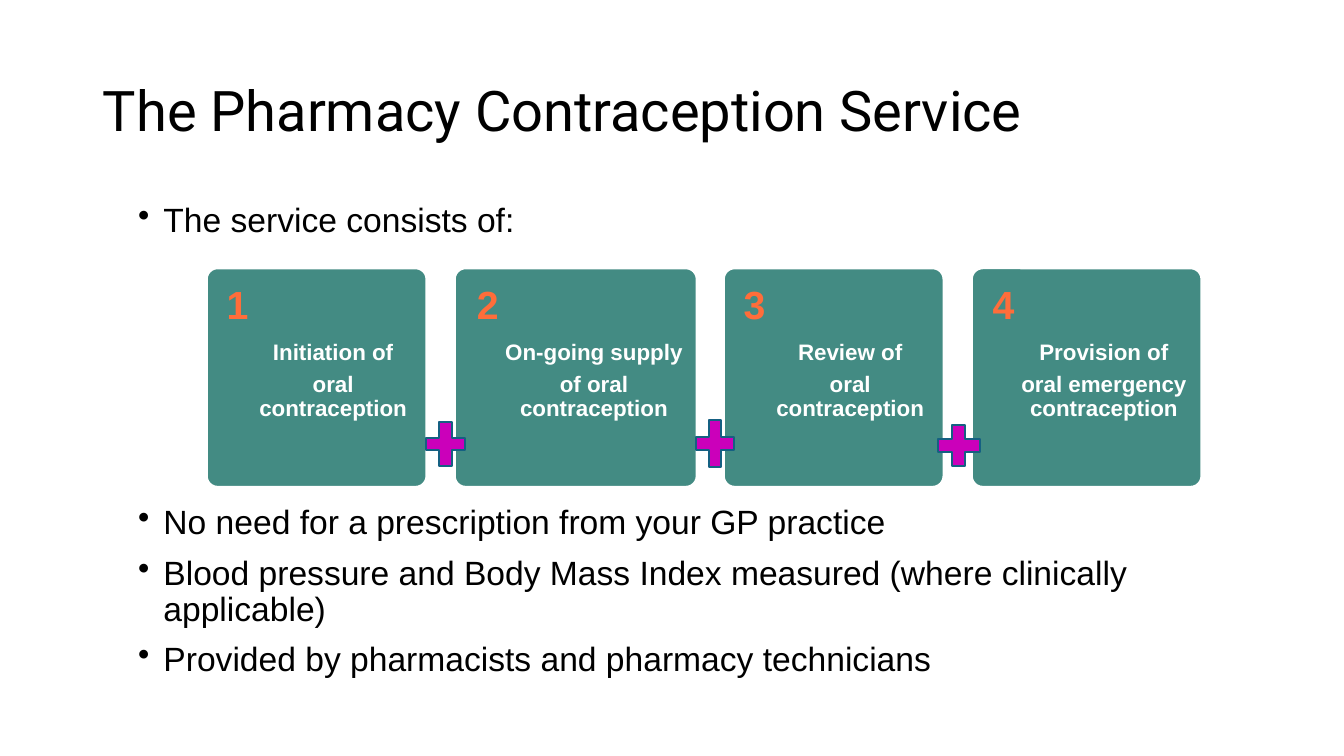
from lxml import etree
from pptx import Presentation
from pptx.dml.color import RGBColor
from pptx.enum.shapes import MSO_SHAPE
from pptx.enum.text import MSO_ANCHOR, MSO_AUTO_SIZE, PP_ALIGN
from pptx.oxml.ns import qn
from pptx.util import Cm, Pt

LEFT, CENTER = PP_ALIGN.LEFT, PP_ALIGN.CENTER
MIDDLE = MSO_ANCHOR.MIDDLE
NO_AUTOFIT = MSO_AUTO_SIZE.NONE
ROUNDED, PLUS = MSO_SHAPE.ROUNDED_RECTANGLE, MSO_SHAPE.MATH_PLUS

BULLET_GROUPS = [
    (5, ["The service consists of:"]),
    (12.62, [
        "No need for a prescription from your GP practice",
        "Blood pressure and Body Mass Index measured (where clinically applicable)",
        "Provided by pharmacists and pharmacy technicians",
    ]),
]
CARD_TOP, CARD_HEIGHT = 6.76, 5.51
CARDS = [
    (5.21, 5.54, ["Initiation of", "oral contraception"]),
    (11.46, 6.1, ["On-going supply", "of oral contraception"]),
    (18.24, 5.54, ["Review of", "oral contraception"]),
    (24.49, 5.79, ["Provision of", "oral emergency contraception"]),
]
PLUSES = [
    (10.55, 10.43, 1.35, 1.52),
    (17.36, 10.38, 1.32, 1.6),
    (23.44, 10.52, 1.45, 1.42),
]


def color(value):
    return RGBColor.from_string(value)


def write(frame, lines, size, ink, font="Arial", bold=False, align=LEFT):
    frame.word_wrap = True
    frame.auto_size = NO_AUTOFIT
    frame.text = "\n".join(lines)
    for para in frame.paragraphs:
        para.alignment = align
        para.line_spacing = 0.9
        for span in para.runs:
            span.font.name = font
            span.font.size = Pt(size)
            span.font.bold = bold
            span.font.color.rgb = color(ink)


deck = Presentation()
deck.slide_width, deck.slide_height = Cm(33.87), Cm(19.05)
page = deck.slides.add_slide(deck.slide_layouts[5])
shapes = page.shapes

title = shapes.title
title.left, title.top, title.width, title.height = Cm(2.34), Cm(1.02), Cm(29.21), Cm(3.68)
title.text_frame.vertical_anchor = MIDDLE
write(title.text_frame, ["The Pharmacy Contraception Service"], 40, "000000", font="Roboto")

for top, lines in BULLET_GROUPS:
    box = shapes.add_textbox(Cm(3.23), Cm(top), Cm(27.41), Cm(1.5 * len(lines)))
    write(box.text_frame, lines, 24, "000000")
    for index, para in enumerate(box.text_frame.paragraphs):
        para.space_before = Pt(10 if index else 0)
        properties = para._p.get_or_add_pPr()
        properties.set("marL", str(Cm(0.64)))
        properties.set("indent", str(-Cm(0.64)))
        etree.SubElement(properties, qn("a:buChar")).set("char", "•")

for number, (left, width, lines) in enumerate(CARDS, 1):
    card = shapes.add_shape(ROUNDED, Cm(left), Cm(CARD_TOP), Cm(width), Cm(CARD_HEIGHT))
    card.adjustments[0] = 0.05
    card.shadow.inherit = False
    card.fill.solid()
    card.fill.fore_color.rgb = color("438B83")
    card.line.color.rgb = color("FFFFFF")
    card.line.width = Pt(1.5)

    label = shapes.add_textbox(Cm(left + 0.1 * width - 0.05), Cm(7.21), Cm(1.2), Cm(1.1))
    write(label.text_frame, [str(number)], 28, "FF6D3A", bold=True)

    caption = shapes.add_textbox(Cm(left + 0.2 * width), Cm(8.6), Cm(0.75 * width), Cm(3.67))
    write(caption.text_frame, lines, 16, "FFFFFF", bold=True, align=CENTER)
    for para in caption.text_frame.paragraphs:
        para.space_after = Pt(5.6)

    for box in (label, caption):
        frame = box.text_frame
        frame.margin_left = frame.margin_top = frame.margin_right = frame.margin_bottom = 0

for bounds in PLUSES:
    plus = shapes.add_shape(PLUS, *map(Cm, bounds))
    plus.shadow.inherit = False
    plus.fill.solid()
    plus.fill.fore_color.rgb = color("CB00BA")
    plus.line.color.rgb = color("156082")
    plus.line.width = Pt(1.5)

deck.save("out.pptx")
